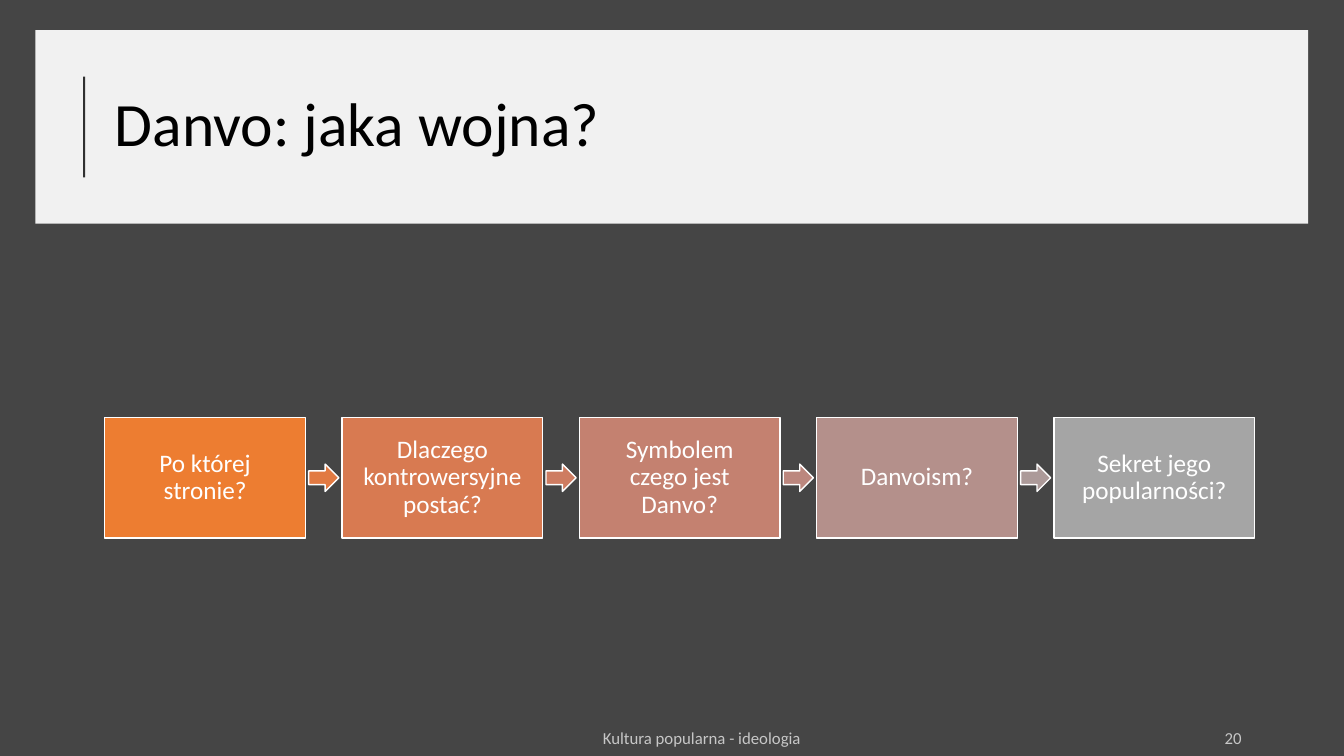
from lxml.etree import SubElement
from pptx import Presentation
from pptx.dml.color import RGBColor
from pptx.enum.shapes import MSO_CONNECTOR as Connector, MSO_SHAPE as Shape
from pptx.enum.text import MSO_ANCHOR as Anchor, PP_ALIGN as Align
from pptx.oxml.ns import qn
from pptx.util import Cm, Pt

COLOURS = {
    "background": "454545",
    "white": "FFFFFF",
    "black": "000000",
}
STEPS = [
    ("Po której stronie?", "ED7D31"),
    ("Dlaczego kontrowersyjne postać?", "D87A51"),
    ("Symbolem czego jest Danvo?", "C48170"),
    ("Danvoism?", "B4908B"),
    ("Sekret jego popularności?", "A5A5A5"),
]
ARROW_FILLS = ["E27A42", "CE7C61", "BC877E", "AC9A99"]
STEP_LEFT, STEP_TOP, STEP_PITCH = 2.64, 10.52, 5.98
STEP_WIDTH, STEP_HEIGHT = 5.06, 3.04
ARROW_OFFSET, ARROW_WIDTH, ARROW_HEIGHT = 5.14, 0.76, 0.69


def paint(colour_format, colour, opacity=100):
    colour_format.rgb = RGBColor.from_string(colour)
    if opacity < 100:
        for node in colour_format._xFill.iter(qn("a:srgbClr")):
            SubElement(node, qn("a:alpha")).set("val", str(opacity * 1000))


def write(box, text, size, colour, align=Align.LEFT, opacity=100, spacing=1.0, inset=None):
    frame = box.text_frame
    frame.text = text
    frame.word_wrap = True
    frame.vertical_anchor = Anchor.MIDDLE
    if inset is not None:
        frame.margin_left = frame.margin_right = Cm(inset)
        frame.margin_top = frame.margin_bottom = Cm(inset)
    para = frame.paragraphs[0]
    para.alignment = align
    para.line_spacing = spacing
    font = para.runs[0].font
    font.name = "Calibri"
    font.size = Pt(size)
    font.fill.solid()
    paint(font.fill.fore_color, colour, opacity)


def add_text(page, left, top, width, height, *content, **style):
    box = page.shapes.add_textbox(Cm(left), Cm(top), Cm(width), Cm(height))
    write(box, *content, **style)


def add_block(page, kind, left, top, width, height, fill, opacity=100, outlined=True):
    block = page.shapes.add_shape(kind, Cm(left), Cm(top), Cm(width), Cm(height))
    block.shadow.inherit = False
    block.fill.solid()
    paint(block.fill.fore_color, fill, opacity)
    if outlined:
        block.line.color.rgb = RGBColor.from_string(COLOURS["white"])
        block.line.width = Pt(1)
    else:
        block.line.fill.background()
    return block


def add_rule(page, left, top, bottom):
    rule = page.shapes.add_connector(Connector.STRAIGHT, Cm(left), Cm(bottom), Cm(left), Cm(top))
    rule.line.width = Pt(1.5)
    rule.line.fill.solid()
    paint(rule.line.fill.fore_color, COLOURS["black"], 80)
    SubElement(rule._element.spPr, qn("a:effectLst"))


def add_header(page):
    add_block(page, Shape.RECTANGLE, 0.89, 0.76, 32.08, 4.88, COLOURS["white"],
              opacity=93, outlined=False)
    add_text(page, 2.64, 1.33, 29.01, 3.73, "Danvo: jaka wojna?", 44, COLOURS["black"],
             spacing=0.9)
    add_rule(page, 2.12, 1.93, 4.47)


def add_process(page):
    for index, (label, fill) in enumerate(STEPS):
        left = STEP_LEFT + index * STEP_PITCH
        step = add_block(page, Shape.RECTANGLE, left, STEP_TOP, STEP_WIDTH, STEP_HEIGHT, fill)
        write(step, label, 18, COLOURS["white"], align=Align.CENTER, spacing=0.9, inset=0.43)
    arrow_top = STEP_TOP + (STEP_HEIGHT - ARROW_HEIGHT) / 2
    for index, fill in enumerate(ARROW_FILLS):
        left = STEP_LEFT + index * STEP_PITCH + ARROW_OFFSET
        add_block(page, Shape.RIGHT_ARROW, left, arrow_top, ARROW_WIDTH, ARROW_HEIGHT, fill)


def add_footer(page):
    add_text(page, 12.61, 18.21, 10.16, 0.76, "Kultura popularna - ideologia", 12,
             COLOURS["white"], align=Align.CENTER, opacity=70)
    add_text(page, 23.92, 18.21, 7.62, 0.76, "20", 12,
             COLOURS["white"], align=Align.RIGHT, opacity=70)


def main():
    deck = Presentation()
    deck.slide_width, deck.slide_height = Cm(33.87), Cm(19.05)
    page = deck.slides.add_slide(deck.slide_layouts[6])
    page.background.fill.solid()
    paint(page.background.fill.fore_color, COLOURS["background"])
    add_header(page)
    add_footer(page)
    add_process(page)
    deck.save("out.pptx")


if __name__ == "__main__":
    main()
